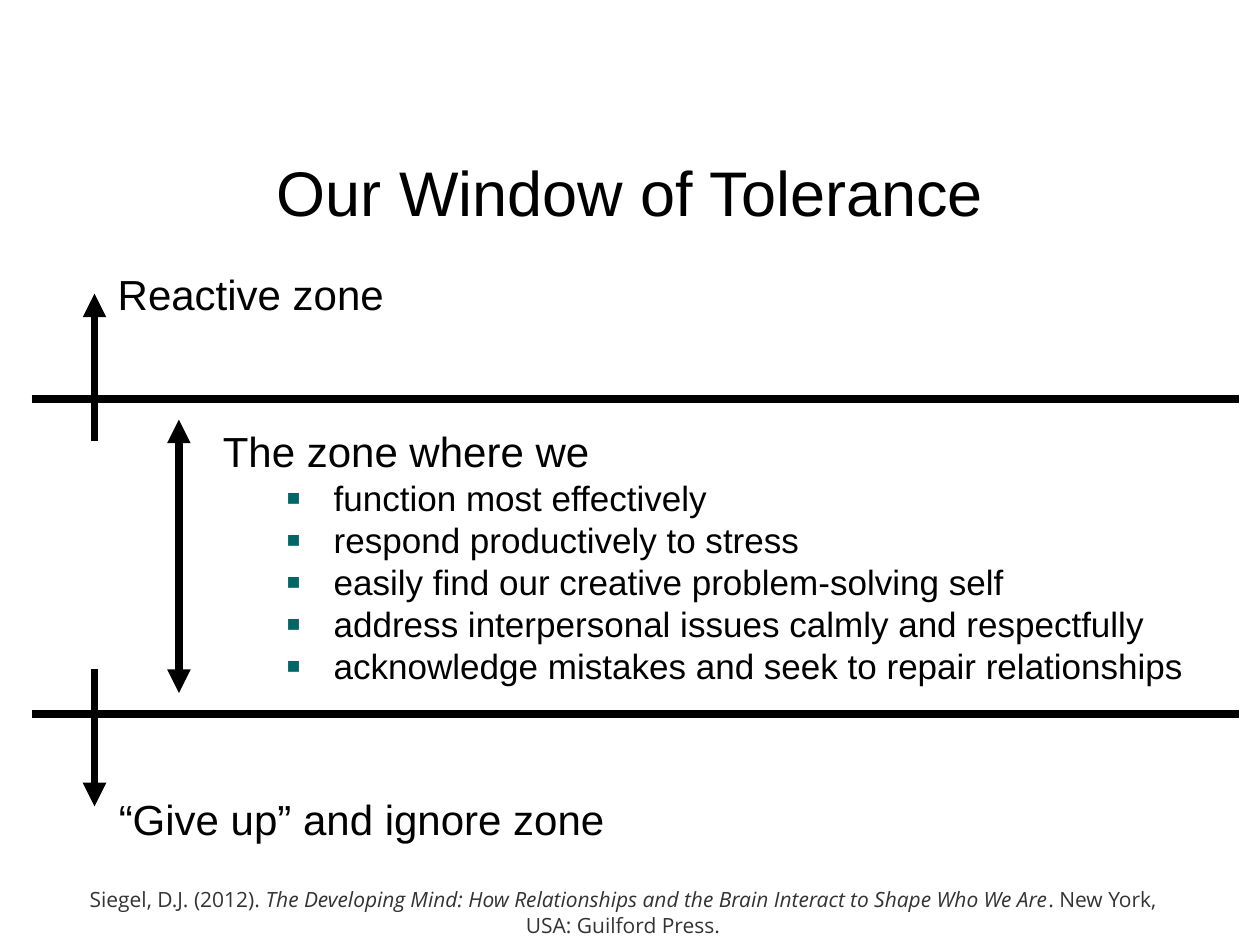
import dataclasses
import typing

import lxml.etree
import pptx
import pptx.dml.color
import pptx.enum.shapes
import pptx.enum.text
import pptx.oxml.ns
import pptx.util

Inches = pptx.util.Inches
Pt = pptx.util.Pt
qn = pptx.oxml.ns.qn
CENTER = pptx.enum.text.PP_ALIGN.CENTER


@dataclasses.dataclass(frozen=True)
class Theme:
    ink: str = "000000"
    bullet: str = "006666"
    citation_ink: str = "333333"
    font: str = "Arial"
    citation_font: str = "Open Sans"
    title_size: int = 36
    zone_size: int = 24
    bullet_size: int = 20
    citation_size: int = 12
    line_width: float = 4.5


@dataclasses.dataclass(frozen=True)
class Line:
    x1: float
    y1: float
    x2: float
    y2: float
    head: bool = False
    tail: bool = False


@dataclasses.dataclass(frozen=True)
class Label:
    text: str
    left: float
    top: float
    width: float
    height: float
    size: int
    wrap: bool = False


THEME = Theme()

LINES = [
    Line(0.25, 3.17, 9.83, 3.17),
    Line(0.25, 5.67, 9.83, 5.67),
    Line(1.42, 3.33, 1.42, 5.5, head=True, tail=True),
    Line(0.75, 3.5, 0.75, 2.33, tail=True),
    Line(0.75, 5.31, 0.75, 6.4, tail=True),
]

LABELS = [
    Label("Our Window of Tolerance", 0.5, 1.17, 9, 1.08, THEME.title_size, True),
    Label("Reactive zone", 0.82, 2.08, 2.34, 0.51, THEME.zone_size),
    Label("“Give up” and ignore zone", 0.82, 6.25, 4.1, 0.51, THEME.zone_size),
]

ABILITIES = [
    "function most effectively",
    "respond productively to stress",
    "easily find our creative problem-solving self",
    "address interpersonal issues calmly and respectfully",
    "acknowledge mistakes and seek to repair relationships",
]

CITATION = [
    ("Siegel, D.J. (2012). ", False),
    ("The Developing Mind: How Relationships and the Brain Interact to Shape Who We Are", True),
    (". New York, USA: Guilford Press.", False),
]


def style(run: typing.Any, size: int, color: str = THEME.ink, font: str = THEME.font) -> None:
    run.font.size = Pt(size)
    run.font.name = font
    run.font.color.rgb = pptx.dml.color.RGBColor.from_string(color)


def add_frame(slide: typing.Any, left: float, top: float, width: float, height: float,
              wrap: bool = True) -> typing.Any:
    box = slide.shapes.add_textbox(Inches(left), Inches(top), Inches(width), Inches(height))
    box.text_frame.word_wrap = wrap
    return box.text_frame


def draw_line(slide: typing.Any, line: Line) -> None:
    connector = slide.shapes.add_connector(
        pptx.enum.shapes.MSO_CONNECTOR.STRAIGHT,
        Inches(line.x1), Inches(line.y1), Inches(line.x2), Inches(line.y2))
    connector.line.color.rgb = pptx.dml.color.RGBColor.from_string(THEME.ink)
    connector.line.width = Pt(THEME.line_width)
    outline = connector.line._get_or_add_ln()
    for tag, shown in (("a:headEnd", line.head), ("a:tailEnd", line.tail)):
        if shown:
            lxml.etree.SubElement(outline, qn(tag), type="triangle")
    lxml.etree.SubElement(connector._element.spPr, qn("a:effectLst"))


def draw_label(slide: typing.Any, label: Label) -> None:
    frame = add_frame(slide, label.left, label.top, label.width, label.height, label.wrap)
    frame.text = label.text
    frame.paragraphs[0].alignment = CENTER
    style(frame.paragraphs[0].runs[0], label.size)


def add_bullet(paragraph: typing.Any) -> None:
    properties = paragraph._p.get_or_add_pPr()
    properties.set("marL", str(Inches(0.88)))
    properties.set("indent", str(Inches(-0.38)))
    color = lxml.etree.SubElement(properties, qn("a:buClr"))
    lxml.etree.SubElement(color, qn("a:srgbClr"), val=THEME.bullet)
    lxml.etree.SubElement(properties, qn("a:buSzPct"), val="125000")
    lxml.etree.SubElement(properties, qn("a:buFont"), typeface=THEME.font)
    lxml.etree.SubElement(properties, qn("a:buChar"), char="▪")


def draw_tolerance_zone(slide: typing.Any) -> None:
    frame = add_frame(slide, 1.67, 3.33, 8.17, 2.59)
    frame.text = "The zone where we"
    style(frame.paragraphs[0].runs[0], THEME.zone_size)
    for ability in ABILITIES:
        paragraph = frame.add_paragraph()
        paragraph.text = ability
        paragraph.level = 1
        add_bullet(paragraph)
        paragraph.line_spacing = Pt(24)
        style(paragraph.runs[0], THEME.bullet_size)


def draw_citation(slide: typing.Any) -> None:
    paragraph = add_frame(slide, 0.5, 6.99, 8.89, 0.51).paragraphs[0]
    paragraph.alignment = CENTER
    for text, italic in CITATION:
        run = paragraph.add_run()
        run.text = text
        run.font.italic = italic
        style(run, THEME.citation_size, THEME.citation_ink, THEME.citation_font)


def main() -> None:
    presentation = pptx.Presentation()
    presentation.slide_width = Inches(10)
    presentation.slide_height = Inches(7.5)
    slide = presentation.slides.add_slide(presentation.slide_layouts[6])
    for line in LINES:
        draw_line(slide, line)
    for label in LABELS:
        draw_label(slide, label)
    draw_tolerance_zone(slide)
    draw_citation(slide)
    presentation.save("out.pptx")


if __name__ == "__main__":
    main()
